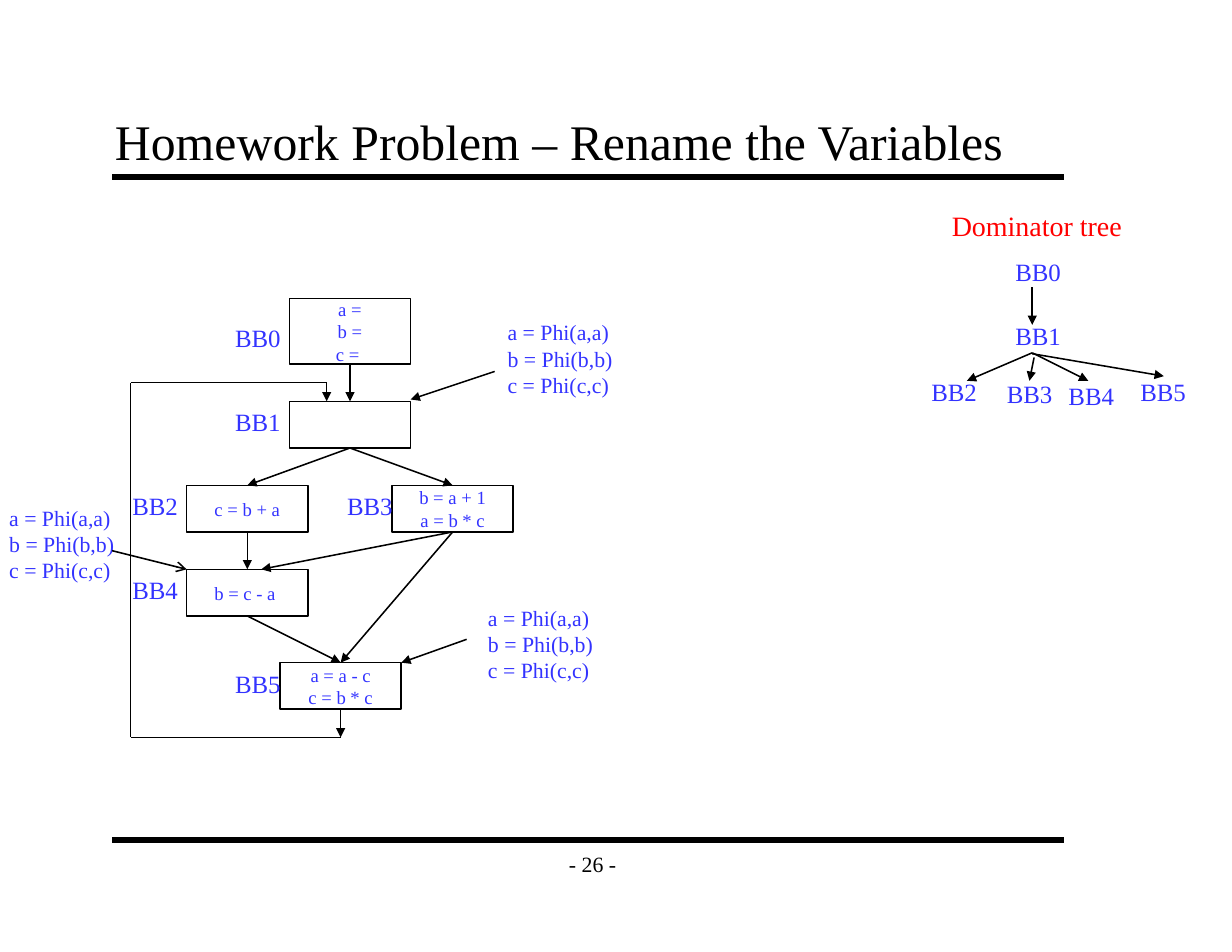
"""Build a slide with a control flow graph, its Phi functions and its dominator tree."""
from itertools import pairwise

from lxml import etree
from pptx import Presentation
from pptx.dml.color import RGBColor
from pptx.enum.shapes import MSO_CONNECTOR, MSO_SHAPE
from pptx.enum.text import MSO_ANCHOR, PP_ALIGN
from pptx.oxml.ns import qn
from pptx.util import Inches, Pt

RECTANGLE = MSO_SHAPE.RECTANGLE
STRAIGHT = MSO_CONNECTOR.STRAIGHT
TOP, MIDDLE, BOTTOM = MSO_ANCHOR.TOP, MSO_ANCHOR.MIDDLE, MSO_ANCHOR.BOTTOM
LEFT, CENTER = PP_ALIGN.LEFT, PP_ALIGN.CENTER
TOP_SIDE, BOTTOM_SIDE = 0, 2

COLORS = {"ink": "000000", "code": "3333FF", "heading": "FF0000"}
FONT = "Times New Roman"
COLUMNS, ROWS = 132, 102
CELLS_PER_INCH = 12
BOX_WIDTH = 13
LABEL_SIZE = (7.3, 4.4)
PHI_SIZE = (13.8, 9.7)
PHI_TEXT = "a = Phi(a,a)\nb = Phi(b,b)\nc = Phi(c,c)"

# name: (column, row, height, code)
BLOCKS = {
    "BB0": (31, 32, 7, "a =\nb =\nc = "),
    "BB1": (31, 43, 5, ""),
    "BB2": (20, 52, 5, "c = b + a"),
    "BB3": (42, 52, 5, "b = a + 1\na = b * c"),
    "BB4": (20, 61, 5, "b = c - a "),
    "BB5": (30, 71, 5, "a = a - c\nc = b * c"),
}
BLOCK_LABELS = {
    "BB0": (24, 34), "BB1": (24, 43), "BB2": (13, 52),
    "BB3": (36, 52), "BB4": (13, 61), "BB5": (24, 71),
}
FLOW = [("BB0", "BB1"), ("BB1", "BB2"), ("BB1", "BB3"),
        ("BB2", "BB4"), ("BB4", "BB5"), ("BB3", "BB5")]
BACK_EDGE = [(36.5, 79), (14, 79), (14, 41), (35, 41), (35, 43)]
# text position, arrow start, arrow end, arrowhead
PHI_NOTES = [
    ((53.2, 33.6), (53, 39.8), (44, 42.8), "triangle"),
    ((51.1, 64.2), (50, 68.5), (43, 71), "triangle"),
    ((-0.2, 53.5), (12, 59), (20, 61), "arrow"),
]
TREE_LABELS = {
    "BB0": (107.6, 26.9), "BB1": (107.6, 33.8), "BB2": (98.6, 39.8),
    "BB3": (106.7, 40), "BB4": (113.3, 40.2), "BB5": (121, 39.8),
}
TREE_EDGES = [
    ((110.6, 30.8), (110.6, 34.8)),
    ((110.6, 37.8), (103.6, 40.8)),
    ((110.6, 37.8), (116.6, 40.8)),
    ((110.8, 38.3), (110.3, 40.8)),
    ((110.6, 37.9), (124.7, 40.3)),
]


def cells(count):
    """Convert grid cells to a length."""
    return Inches(count / CELLS_PER_INCH)


def write_text(shape, text, size=16, color="code", align=LEFT, anchor=TOP,
               wrap=False, margins=(0.1, 0.05)):
    """Fill a shape with one paragraph per line of text."""
    frame = shape.text_frame
    frame.word_wrap = wrap
    frame.vertical_anchor = anchor
    frame.margin_left = frame.margin_right = Inches(margins[0])
    frame.margin_top = frame.margin_bottom = Inches(margins[1])
    frame.text = text
    for paragraph in frame.paragraphs:
        paragraph.alignment = align
        paragraph.font.name = FONT
        paragraph.font.size = Pt(size)
        paragraph.font.color.rgb = RGBColor.from_string(COLORS[color])


def add_text(slide, text, position, size_in_cells, **text_format):
    """Add a text box on the grid."""
    box = slide.shapes.add_textbox(*map(cells, (*position, *size_in_cells)))
    write_text(box, text, **text_format)


def add_block(slide, column, row, height, code):
    """Add an outlined basic block with its code."""
    shape = slide.shapes.add_shape(
        RECTANGLE, *map(cells, (column, row, BOX_WIDTH, height)))
    shape.shadow.inherit = False
    shape.fill.background()
    shape.line.color.rgb = RGBColor.from_string(COLORS["ink"])
    shape.line.width = Pt(1)
    if code:
        write_text(shape, code, size=12, align=CENTER, anchor=MIDDLE)
    return shape


def add_line(slide, start=(0, 0), end=(0, 0), width=1, head=None,
             source=None, target=None):
    """Draw a line between grid points, joined to blocks where they are given."""
    line = slide.shapes.add_connector(STRAIGHT, *map(cells, (*start, *end)))
    if source is not None:
        line.begin_connect(source, BOTTOM_SIDE)
    if target is not None:
        line.end_connect(target, TOP_SIDE)
    line.line.color.rgb = RGBColor.from_string(COLORS["ink"])
    line.line.width = Pt(width)
    if head:
        etree.SubElement(line.line._get_or_add_ln(), qn("a:tailEnd"), type=head)
    properties = line._element.spPr
    etree.SubElement(properties, qn("a:effectLst"))


def add_frame(slide):
    """Add the title, the two rules and the page number."""
    for row in (19, 90):
        add_line(slide, (12, row), (114, row), width=4)
    add_text(slide, "Homework Problem – Rename the Variables", (11, 11), (102, 8),
             size=32, color="ink", anchor=BOTTOM, wrap=True, margins=(0.11, 0.06))
    add_text(slide, "- 26 -", (59, 90), (9, 5), size=14, color="ink",
             align=CENTER, anchor=MIDDLE, margins=(0.11, 0.06))


def add_labels(slide, labels):
    """Add block names at their grid positions."""
    for name, position in labels.items():
        add_text(slide, name, position, LABEL_SIZE)


def add_flow_graph(slide):
    """Add the blocks, their edges and the loop back to BB1."""
    blocks = {name: add_block(slide, *block) for name, block in BLOCKS.items()}
    add_labels(slide, BLOCK_LABELS)
    for source, target in FLOW:
        add_line(slide, head="triangle", source=blocks[source], target=blocks[target])
    add_line(slide, end=(28, 61), head="triangle", source=blocks["BB3"])
    add_line(slide, end=BACK_EDGE[0], head="triangle", source=blocks["BB5"])
    for start, end in pairwise(BACK_EDGE):
        add_line(slide, start, end, head="triangle" if end == BACK_EDGE[-1] else None)


def add_phi_notes(slide):
    """Add the Phi functions with arrows to their blocks."""
    for position, start, end, head in PHI_NOTES:
        add_text(slide, PHI_TEXT, position, PHI_SIZE, size=14)
        add_line(slide, start, end, head=head)


def add_dominator_tree(slide):
    """Add the dominator tree with its heading."""
    add_text(slide, "Dominator tree", (100.8, 21.8), (20.9, 4.8),
             size=18, color="heading")
    add_labels(slide, TREE_LABELS)
    for start, end in TREE_EDGES:
        add_line(slide, start, end, head="triangle")


def main():
    """Build and save the presentation."""
    presentation = Presentation()
    presentation.slide_width = cells(COLUMNS)
    presentation.slide_height = cells(ROWS)
    slide = presentation.slides.add_slide(presentation.slide_layouts[6])
    add_frame(slide)
    add_flow_graph(slide)
    add_phi_notes(slide)
    add_dominator_tree(slide)
    presentation.save("out.pptx")


if __name__ == "__main__":
    main()
